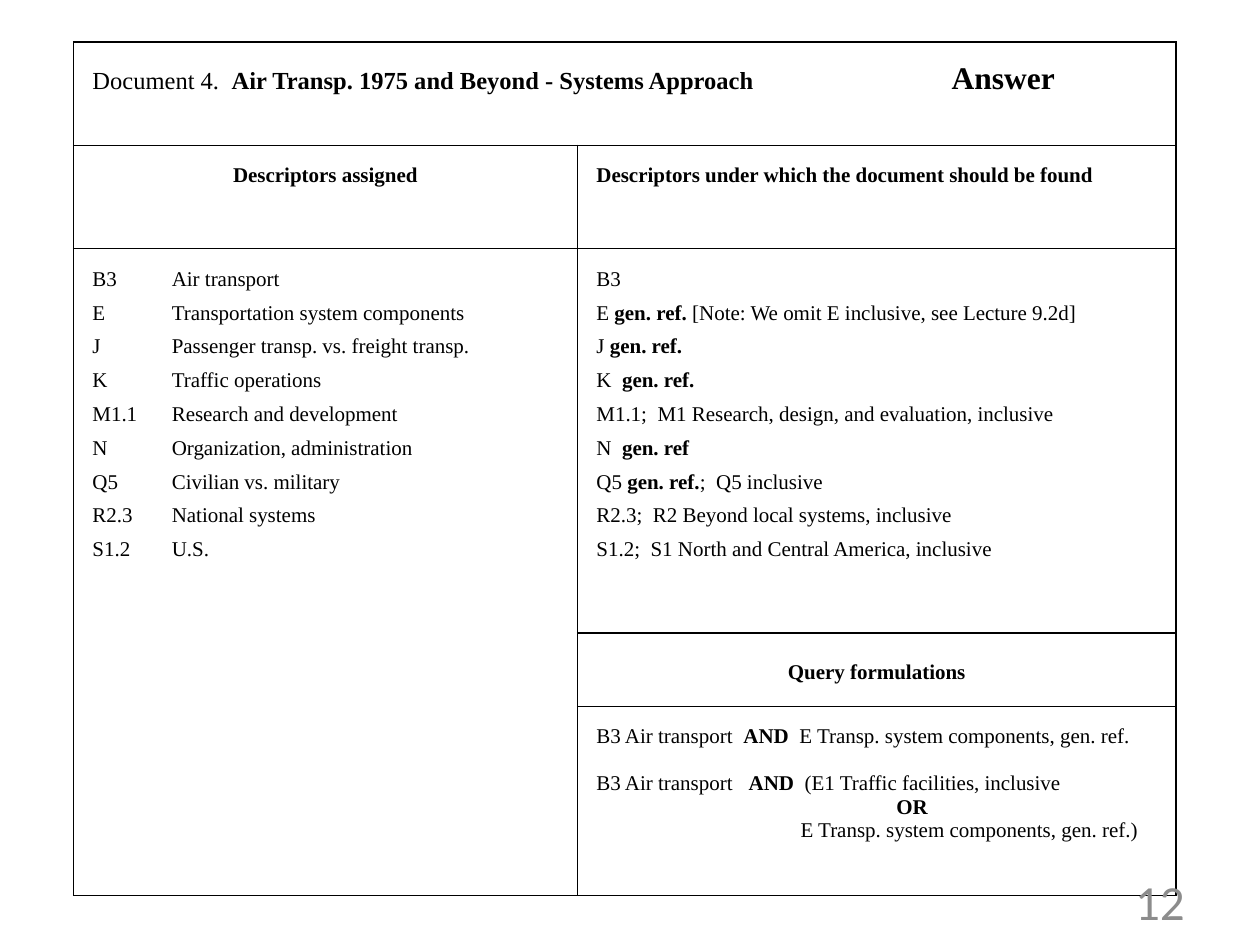
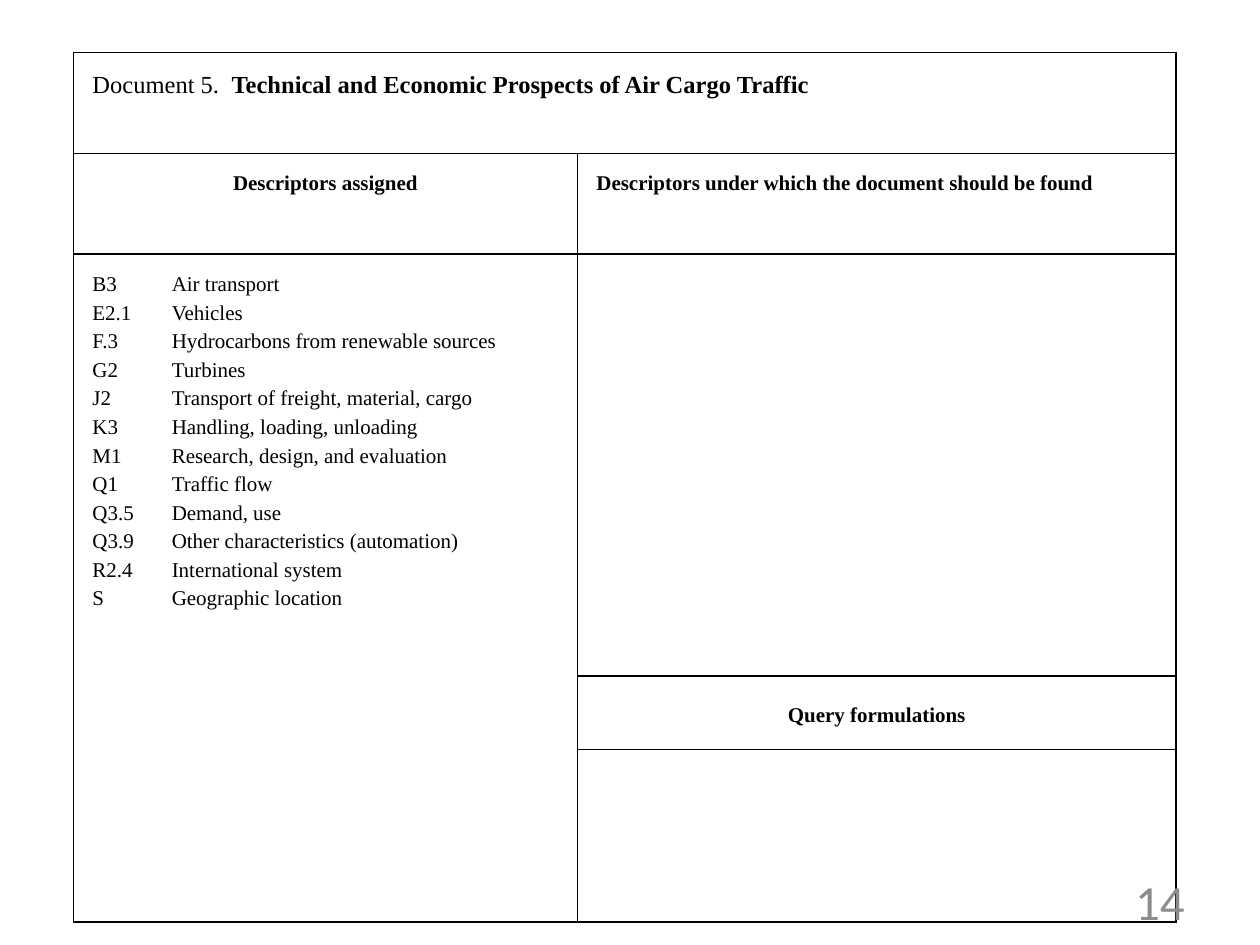
from lxml.etree import SubElement
from pptx import Presentation
from pptx.dml.color import RGBColor
from pptx.enum.text import MSO_ANCHOR, PP_ALIGN
from pptx.oxml.ns import qn
from pptx.util import Emu, Inches, Pt

BLACK = RGBColor(0x00, 0x00, 0x00)
WHITE = RGBColor(0xFF, 0xFF, 0xFF)
GREY = RGBColor(0x8C, 0x8C, 0x8C)
BODY_FONT = "Times New Roman"
NUMBER_FONT = "Calibri"
GRID_COLUMNS, GRID_ROWS = 120, 90
TABLE_LEFT = 7
TABLE_COLUMNS = (48, 57)
CODE_TAB = 0.63

ANSWER = {
    "number": 12,
    "top": 4,
    "rows": (9.84, 9.84, 36.6, 7, 18),
    "title": "Document 4.  **Air Transp. 1975 and Beyond - Systems Approach****\tAnswer**",
    "gap": 6,
    "assigned": [
        "B3\tAir transport",
        "E\tTransportation system components",
        "J\tPassenger transp. vs. freight transp.",
        "K\tTraffic operations",
        "M1.1\tResearch and development",
        "N\tOrganization, administration",
        "Q5\tCivilian vs. military",
        "R2.3\tNational systems",
        "S1.2\tU.S.",
    ],
    "found": [
        "B3",
        "E **gen. ref. **[Note: We omit E inclusive, see Lecture 9.2d]",
        "J **gen. ref.**",
        "K  **gen. ref.**",
        "M1.1;  M1 Research, design, and evaluation, inclusive",
        "N  **gen. ref**",
        "Q5 **gen. ref.**;  Q5 inclusive",
        "R2.3;  R2 Beyond local systems, inclusive",
        "S1.2;  S1 North and Central America, inclusive",
    ],
    "queries": [
        "B3 Air transport  **AND**  E Transp. system components, gen. ref.",
        "B3 Air transport   **AND**  (E1 Traffic facilities, inclusive",
        "\t\t**OR**",
        "\tE Transp. system components, gen. ref.)",
    ],
}
EXERCISE = {
    "number": 14,
    "top": 5,
    "rows": (9.6, 9.6, 40.2, 7, 16.4),
    "title": "Document 5.  **Technical and Economic Prospects of Air Cargo Traffic**",
    "gap": 3,
    "assigned": [
        "B3\tAir transport",
        "E2.1\tVehicles",
        "F.3\tHydrocarbons from renewable sources",
        "G2\tTurbines",
        "J2\tTransport of freight, material, cargo",
        "K3\tHandling, loading, unloading",
        "M1\tResearch, design, and evaluation",
        "Q1\tTraffic flow",
        "Q3.5\tDemand, use",
        "Q3.9\tOther characteristics (automation)",
        "R2.4\tInternational system",
        "S\tGeographic location",
    ],
    "found": [],
    "queries": [],
}


class Worksheet:
    """Holds the deck, its grid and style, and the current page."""

    def __init__(self):
        self.deck = Presentation()
        self.deck.slide_width, self.deck.slide_height = Inches(10), Inches(7.5)
        self.page = None

    def across(self, columns):
        return Emu(round(self.deck.slide_width * columns / GRID_COLUMNS))

    def down(self, rows):
        return Emu(round(self.deck.slide_height * rows / GRID_ROWS))

    def add_page(self):
        self.page = self.deck.slides.add_slide(self.deck.slide_layouts[6])

    def add_text(self, frame, lines, size=12, gap=0, tabs=(), align=PP_ALIGN.LEFT,
                 font=BODY_FONT, color=BLACK):
        """Add lines, with bold parts between double asterisks."""
        for index, line in enumerate(lines):
            para = frame.paragraphs[0] if index == 0 else frame.add_paragraph()
            para.alignment = align
            para.space_after = Pt(gap)
            if tabs:
                stops = SubElement(para._p.get_or_add_pPr(), qn("a:tabLst"))
                for stop in tabs:
                    SubElement(stops, qn("a:tab"), pos=str(Inches(stop)), algn="l")
            for order, part in enumerate(line.split("**")):
                if part:
                    span = para.add_run()
                    span.text = part
                    span.font.name, span.font.size = font, Pt(size)
                    span.font.bold = order % 2 == 1
                    span.font.color.rgb = color
        return frame.paragraphs

    def style_cell(self, cell):
        cell.margin_left = cell.margin_right = Inches(0.15)
        cell.margin_top = cell.margin_bottom = Inches(0.15)
        properties = cell._tc.get_or_add_tcPr()
        for side in ("a:lnL", "a:lnR", "a:lnT", "a:lnB"):
            border = SubElement(properties, qn(side), w=str(Pt(1)))
            paint = SubElement(border, qn("a:solidFill"))
            SubElement(paint, qn("a:srgbClr"), val=str(BLACK))
        cell.fill.solid()
        cell.fill.fore_color.rgb = WHITE

    def add_table(self, top, heights):
        table = self.page.shapes.add_table(
            len(heights), len(TABLE_COLUMNS), self.across(TABLE_LEFT), self.down(top),
            self.across(sum(TABLE_COLUMNS)), self.down(sum(heights))).table
        table.first_row = table.horz_banding = False
        for column, width in zip(table.columns, TABLE_COLUMNS):
            column.width = self.across(width)
        for row, height in zip(table.rows, heights):
            row.height = self.down(height)
        for cell in table.iter_cells():
            self.style_cell(cell)
        table.cell(0, 0).merge(table.cell(0, 1))
        table.cell(2, 0).merge(table.cell(4, 0))
        return table

    def add_number(self, number):
        box = self.page.shapes.add_textbox(
            self.across(86), self.down(83.4), self.across(28), self.down(4.8))
        box.text_frame.word_wrap = True
        box.text_frame.vertical_anchor = MSO_ANCHOR.MIDDLE
        self.add_text(box.text_frame, [str(number)], size=28, align=PP_ALIGN.RIGHT,
                      font=NUMBER_FONT, color=GREY)

    def add_document(self, document):
        self.add_page()
        table = self.add_table(document["top"], document["rows"])

        def frame(row, column):
            return table.cell(row, column).text_frame

        title = self.add_text(frame(0, 0), [document["title"]], size=14, tabs=[6.82])[0]
        if "\t" in document["title"]:
            title.runs[-1].font.size = Pt(18)
        self.add_text(frame(1, 0), ["**Descriptors assigned**"], align=PP_ALIGN.CENTER)
        self.add_text(frame(1, 1), ["**Descriptors under which the document should be found**"])
        self.add_text(frame(2, 0), document["assigned"], gap=document["gap"], tabs=[CODE_TAB])
        self.add_text(frame(2, 1), document["found"], gap=document["gap"])
        heading = self.add_text(frame(3, 1), ["**Query formulations**"], align=PP_ALIGN.CENTER)[0]
        heading.line_spacing = 1.39
        queries = self.add_text(frame(4, 1), document["queries"], tabs=[1.62, 2.38])
        if document["queries"]:
            queries[0].space_after = Pt(13.5)
        self.add_number(document["number"])


def main():
    worksheet = Worksheet()
    for document in (ANSWER, EXERCISE):
        worksheet.add_document(document)
    worksheet.deck.save("out.pptx")


if __name__ == "__main__":
    main()
